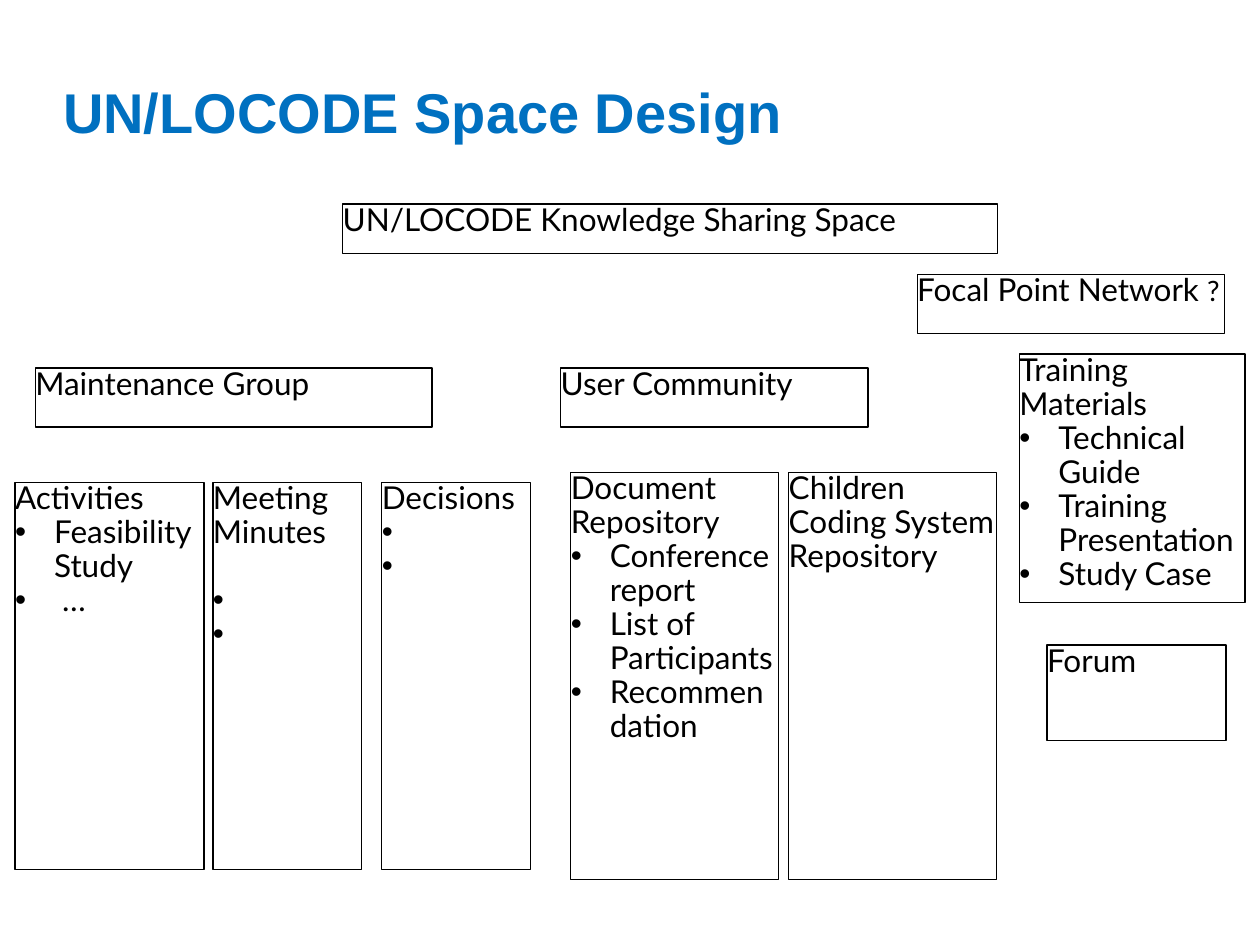
import pptx
import pptx.util
import pptx.dml.color
import pptx.enum.shapes
import pptx.enum.text
import lxml.etree
from pptx.util import Inches, Pt

BLUE = pptx.dml.color.RGBColor(0x00, 0x70, 0xC0)
BLACK = pptx.dml.color.RGBColor(0x00, 0x00, 0x00)
LEFT = pptx.enum.text.PP_ALIGN.LEFT


def set_frame(frame, anchor):
    frame.word_wrap = True
    frame.auto_size = pptx.enum.text.MSO_AUTO_SIZE.NONE
    frame.vertical_anchor = anchor
    frame.margin_left = frame.margin_right = 0
    frame.margin_top = frame.margin_bottom = 0


def add_run(para, text, font, size, color):
    run = para.add_run()
    run.text = text
    run.font.name = font
    run.font.size = Pt(size)
    run.font.color.rgb = color
    return run


deck = pptx.Presentation()
deck.slide_width = Inches(10)
deck.slide_height = Inches(7.5)
slide = deck.slides.add_slide(deck.slide_layouts[5])

title = slide.shapes.title
title.left, title.top = Inches(0.5), Inches(0.33)
title.width, title.height = Inches(9), Inches(0.83)
set_frame(title.text_frame, pptx.enum.text.MSO_ANCHOR.BOTTOM)
para = title.text_frame.paragraphs[0]
para.alignment = LEFT
para.line_spacing = 0.9
add_run(para, "UN/LOCODE Space Design", "Arial", 32, BLUE).font.bold = True

boxes = [
    (2.72, 1.62, 5.2, 0.39, [("UN/LOCODE Knowledge Sharing Space", 18)], [], 0),
    (0.28, 2.92, 3.15, 0.47, [("Maintenance Group", 18)], [], 0),
    (4.45, 2.92, 2.44, 0.47, [("User Community", 18)], [], 0),
    (7.28, 2.18, 2.44, 0.47, [("Focal Point Network ", 18), ("?", 16)], [], 0),
    (0.12, 3.83, 1.5, 3.07, [("Activities", 18)],
     ["Feasibility Study", " …"], 0),
    (1.69, 3.83, 1.18, 3.07, [("Meeting Minutes", 18)], [" ", " "], 19.4),
    (3.03, 3.83, 1.18, 3.07, [("Decisions", 18)], [" ", " "], 0),
    (4.53, 3.75, 1.65, 3.23, [("Document Repository", 18)],
     ["Conference report", "List of Participants", "Recommendation"], 0),
    (6.26, 3.75, 1.65, 3.23, [("Children Coding System Repository", 18)], [], 0),
    (8.09, 2.81, 1.79, 1.97, [("Training Materials", 18)],
     ["Technical Guide", "Training Presentation", "Study Case"], 0),
    (8.31, 5.12, 1.42, 0.76, [("Forum", 18)], [], 0),
]

for x, y, wide, high, head, items, gap in boxes:
    box = slide.shapes.add_shape(
        pptx.enum.shapes.MSO_SHAPE.RECTANGLE,
        Inches(x), Inches(y), Inches(wide), Inches(high))
    box.shadow.inherit = False
    box.fill.background()
    box.line.color.rgb = BLACK
    box.line.width = Pt(0.75)
    frame = box.text_frame
    set_frame(frame, pptx.enum.text.MSO_ANCHOR.TOP)

    para = frame.paragraphs[0]
    para.alignment = LEFT
    para.line_spacing = 0.9
    for text, size in head:
        add_run(para, text, "Lato", size, BLACK)

    for place, item in enumerate(items):
        para = frame.add_paragraph()
        para.alignment = LEFT
        para.line_spacing = 0.9
        if gap and place == 0:
            para.space_before = Pt(gap)
        props = para._p.get_or_add_pPr()
        props.set("marL", str(Inches(0.31)))
        props.set("indent", str(-Inches(0.31)))
        face = lxml.etree.SubElement(props, pptx.oxml.ns.qn("a:buFont"))
        face.set("typeface", "Arial")
        mark = lxml.etree.SubElement(props, pptx.oxml.ns.qn("a:buChar"))
        mark.set("char", "•")
        add_run(para, item, "Lato", 18, BLACK)

deck.save("out.pptx")
